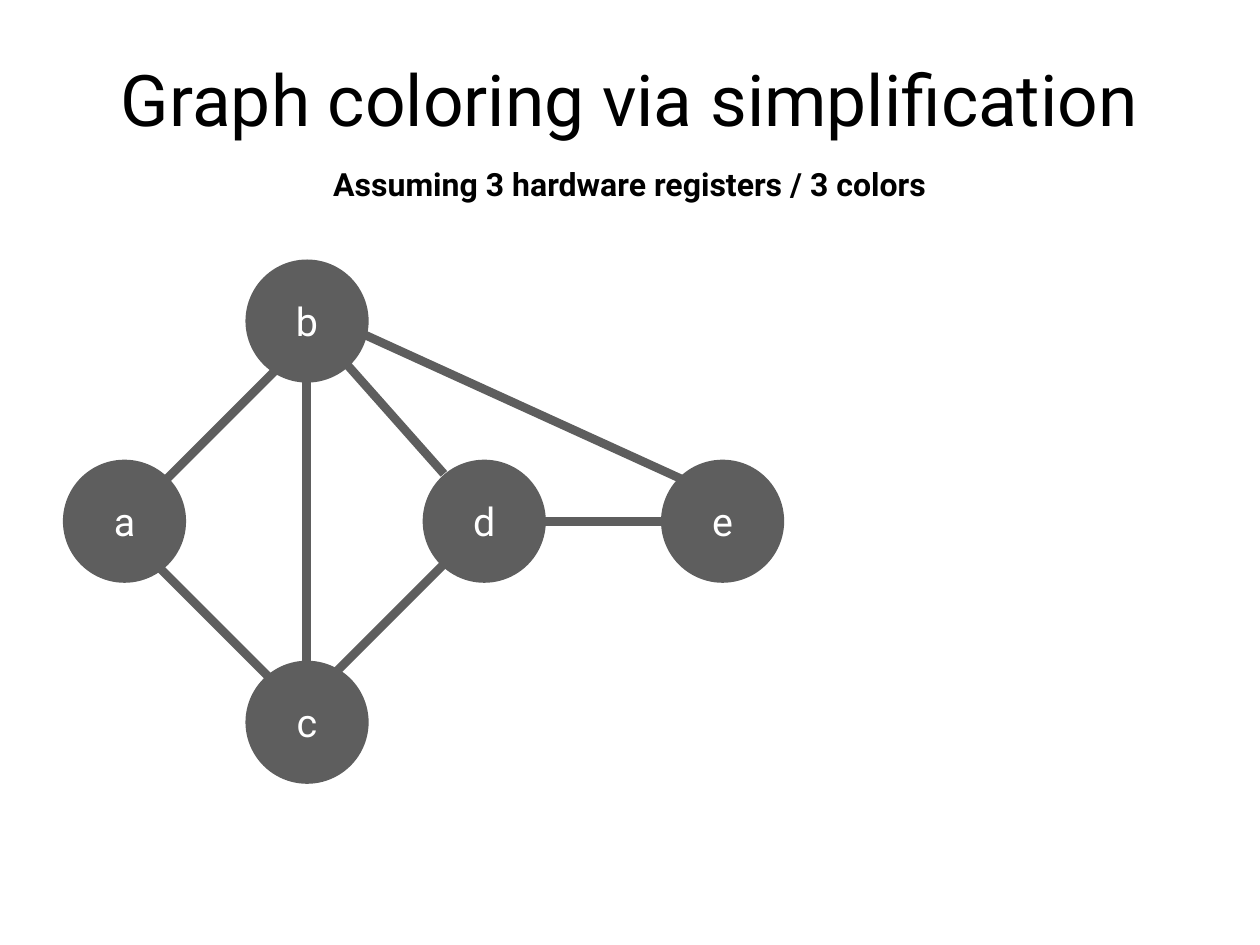
from pptx import Presentation
from pptx.dml.color import RGBColor
from pptx.enum.shapes import MSO_CONNECTOR, MSO_SHAPE
from pptx.enum.text import MSO_ANCHOR, MSO_AUTO_SIZE, PP_ALIGN
from pptx.oxml.ns import qn
from pptx.util import Pt
from lxml import etree

STRAIGHT = MSO_CONNECTOR.STRAIGHT
OVAL = MSO_SHAPE.OVAL
MIDDLE = MSO_ANCHOR.MIDDLE
CENTER = PP_ALIGN.CENTER
GROW = MSO_AUTO_SIZE.SHAPE_TO_FIT_TEXT

EMU_PER_PX = 9144  # 100 px to the inch
BLANK_LAYOUT = 6
FONT = "Roboto"
COLORS = {"text": "000000", "graph": "5E5E5E", "label": "FFFFFF"}
INSET = 6
NODE_SIZE = 139
NODE_TEXT = 32
EDGE_WIDTH = 7


def px(length):
    return length * EMU_PER_PX


def color(name):
    return RGBColor.from_string(COLORS[name])


class GraphSlide:
    def __init__(self, presentation):
        layout = presentation.slide_layouts[BLANK_LAYOUT]
        self.slide = presentation.slides.add_slide(layout)

    def set_text(self, shape, text, size, color_name, bold=False, wrap=True):
        frame = shape.text_frame
        frame.word_wrap = wrap
        frame.vertical_anchor = MIDDLE
        frame.margin_left = frame.margin_right = px(INSET)
        frame.margin_top = frame.margin_bottom = px(INSET)
        paragraph = frame.paragraphs[0]
        paragraph.text = text
        paragraph.alignment = CENTER
        paragraph.font.name = FONT
        paragraph.font.size = Pt(size)
        paragraph.font.bold = bold
        paragraph.font.color.rgb = color(color_name)

    def heading(self, box, text, size, bold=False, wrap=True):
        shape = self.slide.shapes.add_textbox(*map(px, box))
        self.set_text(shape, text, size, "text", bold, wrap)
        if not wrap:
            shape.text_frame.auto_size = GROW

    def node(self, label, left, top):
        shape = self.slide.shapes.add_shape(
            OVAL, px(left), px(top), px(NODE_SIZE), px(NODE_SIZE))
        shape.shadow.inherit = False
        shape.fill.solid()
        shape.fill.fore_color.rgb = color("graph")
        shape.line.fill.background()
        self.set_text(shape, label, NODE_TEXT, "label")

    def edge(self, start, end):
        connector = self.slide.shapes.add_connector(
            STRAIGHT, *map(px, start + end))
        connector.line.color.rgb = color("graph")
        connector.line.width = Pt(EDGE_WIDTH)
        etree.SubElement(connector._element.spPr, qn("a:effectLst"))


def main():
    presentation = Presentation()
    presentation.slide_width = px(1422)
    presentation.slide_height = px(1067)
    graph = GraphSlide(presentation)

    # Headings
    graph.heading((104, 28, 1214, 165), "Graph coloring via simplification",
                  57.9)
    graph.heading((352, 180, 718, 55),
                  "Assuming 3 hardware registers / 3 colors",
                  26, bold=True, wrap=False)

    # Nodes
    upper, middle, lower = 293, 519, 746
    nodes = {"a": (71, middle), "d": (477, middle), "b": (277, upper),
             "e": (746, middle), "c": (277, lower)}
    for label, (left, top) in nodes.items():
        graph.node(label, left, top)

    # Edges, with ends tucked just inside the nodes
    edges = [
        ((176, 553), (315, 414)),  # a to b
        ((312, 773), (180, 641)),  # c to a
        ((376, 762), (508, 630)),  # c to d
        ((501, 535), (384, 403)),  # d to b
        ((570, 589), (759, 589)),  # d to e
        ((346, 428), (346, 749)),  # b to c
        ((776, 544), (405, 375)),  # e to b
    ]
    for start, end in edges:
        graph.edge(start, end)

    presentation.save("out.pptx")


if __name__ == "__main__":
    main()
